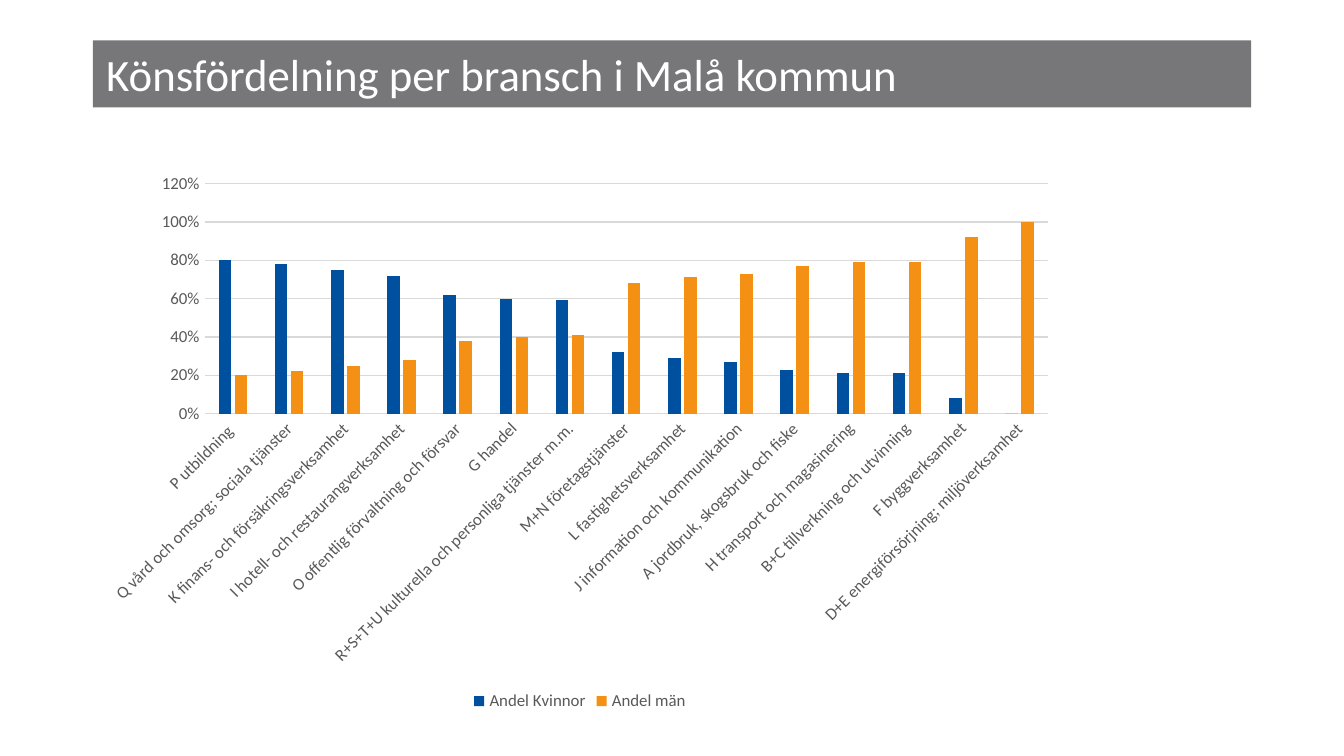
from pptx import Presentation
from pptx.chart.data import CategoryChartData as Data
from pptx.dml.color import RGBColor as Rgb
from pptx.enum.chart import XL_CHART_TYPE as Kind, XL_LEGEND_POSITION as Spot, XL_TICK_MARK as Tick
from pptx.enum.text import MSO_ANCHOR as Anchor, MSO_AUTO_SIZE as Fit, PP_ALIGN as Align
from pptx.util import Inches, Pt

TITLE = "Könsfördelning per bransch i Malå kommun"
SHARES = [
    ("P utbildning ", 0.8, 0.2),
    ("Q vård och omsorg; sociala tjänster", 0.78, 0.22),
    ("K finans- och försäkringsverksamhet", 0.75, 0.25),
    ("I hotell- och restaurangverksamhet", 0.72, 0.28),
    ("O offentlig förvaltning och försvar", 0.62, 0.38),
    ("G handel", 0.6, 0.4),
    ("R+S+T+U kulturella och personliga tjänster m.m.", 0.59, 0.41),
    ("M+N företagstjänster", 0.32, 0.68),
    ("L fastighetsverksamhet", 0.29, 0.71),
    ("J information och kommunikation", 0.27, 0.73),
    ("A jordbruk, skogsbruk och fiske", 0.23, 0.77),
    ("H transport och magasinering", 0.21, 0.79),
    ("B+C tillverkning och utvinning", 0.21, 0.79),
    ("F byggverksamhet", 0.08, 0.92),
    ("D+E energiförsörjning; miljöverksamhet", 0, 1),
]
SERIES = ["Andel Kvinnor", "Andel män"]
THEME = {
    "face": "Calibri", "head": 24, "base": 10, "small": 9,
    "bar": "77777A", "white": "FFFFFF", "black": "000000",
    "text": "595959", "grid": "D9D9D9", "fills": ["0050A0", "F49014"],
}
WIDE = Inches(10)
HIGH = WIDE * 9 // 16
LEFT = Inches(0.69)


def color(name):
    return Rgb.from_string(THEME.get(name, name))


def style(font, size, tone):
    font.name = THEME["face"]
    font.size = Pt(THEME[size])
    font.bold = False
    font.color.rgb = color(tone)


def rule(line):
    line.color.rgb = color("grid")
    line.width = Pt(0.75)


def add_title(slide):
    title = slide.shapes.title
    title.left, title.top = LEFT, Inches(0.3)
    title.width, title.height = WIDE - 2 * LEFT, Inches(0.5)
    title.fill.solid()
    title.fill.fore_color.rgb = color("bar")
    frame = title.text_frame
    frame.text = TITLE
    frame.auto_size = Fit.NONE
    frame.vertical_anchor = Anchor.MIDDLE
    para = frame.paragraphs[0]
    para.alignment = Align.LEFT
    style(para.runs[0].font, "head", "white")


def add_bars(slide):
    names, *shares = zip(*SHARES)
    data = Data(number_format="0%")
    data.categories = names
    for name, vals in zip(SERIES, shares):
        data.add_series(name, vals)
    chart = slide.shapes.add_chart(
        Kind.COLUMN_CLUSTERED, LEFT, Inches(1.21), Inches(7.25), Inches(4.12), data
    ).chart
    chart.has_title = False
    style(chart.font, "base", "black")

    plot = chart.plots[0]
    plot.gap_width, plot.overlap = 219, -27
    plot.vary_by_categories = False
    for series, fill in zip(plot.series, THEME["fills"]):
        series.invert_if_negative = False
        series.format.fill.solid()
        series.format.fill.fore_color.rgb = color(fill)

    cats, vals = chart.category_axis, chart.value_axis
    for axis in (cats, vals):
        axis.major_tick_mark = axis.minor_tick_mark = Tick.NONE
        style(axis.tick_labels.font, "small", "text")
    rule(cats.format.line)
    cats._element.txPr.bodyPr.set("rot", "-2700000")
    vals.format.line.fill.background()
    vals.minimum_scale, vals.maximum_scale, vals.major_unit = 0, 1.2, 0.2
    vals.tick_labels.number_format = "0%"
    vals.tick_labels.number_format_is_linked = False
    rule(vals.major_gridlines.format.line)

    chart.has_legend = True
    chart.legend.position = Spot.BOTTOM
    chart.legend.include_in_layout = False
    style(chart.legend.font, "small", "text")


def main():
    deck = Presentation()
    deck.slide_width, deck.slide_height = WIDE, HIGH
    slide = deck.slides.add_slide(deck.slide_layouts[5])
    add_title(slide)
    add_bars(slide)
    deck.save("out.pptx")


if __name__ == "__main__":
    main()
